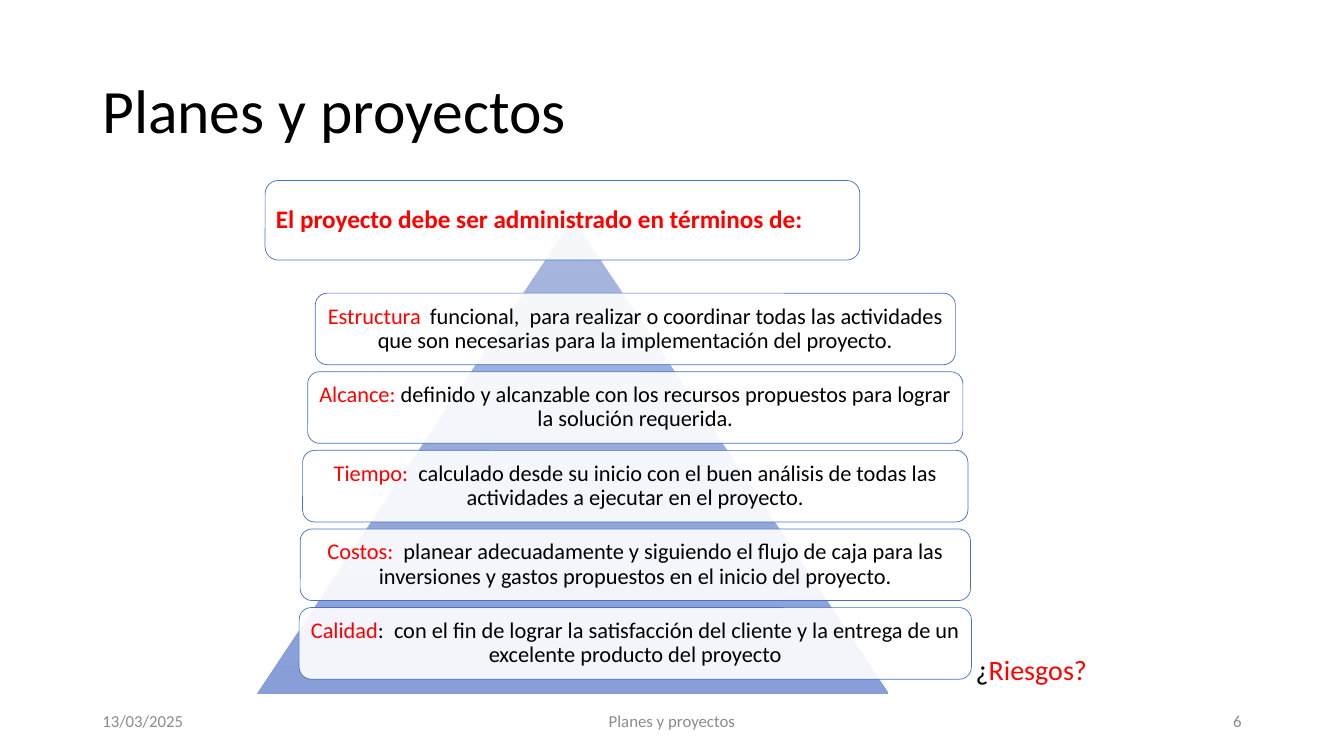
"""Build the slide "Planes y proyectos": five project terms over a pyramid."""
import pptx
import pptx.dml.color
import pptx.enum.shapes
import pptx.enum.text
import pptx.oxml
import pptx.oxml.ns
import pptx.util

Pt = pptx.util.Pt
Shape = pptx.enum.shapes.MSO_SHAPE
Align = pptx.enum.text.PP_ALIGN
Anchor = pptx.enum.text.MSO_ANCHOR

BLACK, RED, GREY, BLUE, WHITE = "000000", "FF0000", "8C8C8C", "4472C4", "FFFFFF"
PYRAMID_COLORS = ("A8B7DF", "889ED7")

TITLE = "Planes y proyectos"
HEADING = "El proyecto debe ser administrado en términos de:"
TERMS = [
    (457.2, [("Estructura", RED, 16), ("  ", RED, 14),
             ("funcional,  para realizar o coordinar todas las actividades que son "
              "necesarias para la implementación del proyecto.", BLACK, 16)]),
    (468, [("Alcance: ", RED, 16),
           ("definido y alcanzable con los recursos propuestos para lograr "
            "la solución requerida.", BLACK, 16)]),
    (475.2, [("Tiempo: ", RED, 16),
             (" calculado desde su inicio con el buen análisis de todas las "
              "actividades a ejecutar en el proyecto.", BLACK, 16)]),
    (478.8, [("Costos:", RED, 16),
             ("  planear adecuadamente y siguiendo el flujo de caja para las "
              "inversiones y gastos propuestos en el inicio del proyecto.", BLACK, 16)]),
    (480.2, [("Calidad", RED, 16),
             (":  con el fin de lograr la satisfacción del cliente y la entrega de un "
              "excelente producto del proyecto", BLACK, 16)]),
]
RISKS = [("¿", BLACK, 20), ("Riesgos?", RED, 20)]
FOOTERS = [
    (66, 216, "13/03/2025", Align.LEFT),
    (318, 324, TITLE, Align.CENTER),
    (678, 216, "6", Align.RIGHT),
]

TERM_CENTER, TERM_TOP, TERM_HEIGHT, TERM_PITCH = 453.8, 209.4, 51.1, 56.15
CARD_MARGIN = 5


def rgb(color):
    return pptx.dml.color.RGBColor.from_string(color)


def write(shape, runs, align=Align.LEFT, spacing=None, bold=False,
          anchor=Anchor.MIDDLE, wrap=True):
    frame = shape.text_frame
    frame.word_wrap = wrap
    frame.vertical_anchor = anchor
    paragraph = frame.paragraphs[0]
    paragraph.alignment = align
    paragraph.line_spacing = spacing
    for text, color, size in runs:
        run = paragraph.add_run()
        run.text = text
        run.font.name = "Calibri"
        run.font.size = Pt(size)
        run.font.bold = bold
        run.font.color.rgb = rgb(color)


def add_text(slide, box, runs, **options):
    write(slide.shapes.add_textbox(*map(Pt, box)), runs, **options)


def add_pyramid(slide):
    pyramid = slide.shapes.add_shape(
        Shape.ISOSCELES_TRIANGLE, Pt(183.6), Pt(156.2), Pt(451.4), Pt(339.8))
    pyramid.shadow.inherit = False
    pyramid.line.fill.background()
    pyramid.fill.gradient()
    pyramid.fill.gradient_angle = 270
    for stop, color in zip(pyramid.fill.gradient_stops, PYRAMID_COLORS):
        stop.color.rgb = rgb(color)


def add_card(slide, box, runs, **options):
    card = slide.shapes.add_shape(Shape.ROUNDED_RECTANGLE, *map(Pt, box))
    card.shadow.inherit = False
    card.fill.solid()
    card.fill.fore_color.rgb = rgb(WHITE)
    color = card.fill._xPr.find(".//" + pptx.oxml.ns.qn("a:srgbClr"))
    color.append(pptx.oxml.parse_xml(
        f'<a:alpha {pptx.oxml.ns.nsdecls("a")} val="90000"/>'))
    card.line.color.rgb = rgb(BLUE)
    card.line.width = Pt(0.5)
    frame = card.text_frame
    frame.margin_left = frame.margin_right = Pt(CARD_MARGIN)
    frame.margin_top = frame.margin_bottom = Pt(CARD_MARGIN)
    write(card, runs, spacing=0.9, **options)


def main():
    presentation = pptx.Presentation()
    presentation.slide_width, presentation.slide_height = Pt(960), Pt(540)
    slide = presentation.slides.add_slide(presentation.slide_layouts[6])

    add_text(slide, (66, 28.8, 828, 104.4), [(TITLE, BLACK, 44)], spacing=0.9)
    for left, width, text, align in FOOTERS:
        add_text(slide, (left, 500.4, width, 28.8), [(text, GREY, 12)], align=align)

    add_pyramid(slide)
    add_card(slide, (189.4, 128.9, 424.8, 56.9), [(HEADING, RED, 18)], bold=True)
    for index, (width, runs) in enumerate(TERMS):
        box = (TERM_CENTER - width / 2, TERM_TOP + index * TERM_PITCH, width, TERM_HEIGHT)
        add_card(slide, box, runs, align=Align.CENTER)
    add_text(slide, (689.8, 462.6, 95, 31.7), RISKS, anchor=Anchor.TOP, wrap=False)

    presentation.save("out.pptx")


if __name__ == "__main__":
    main()
